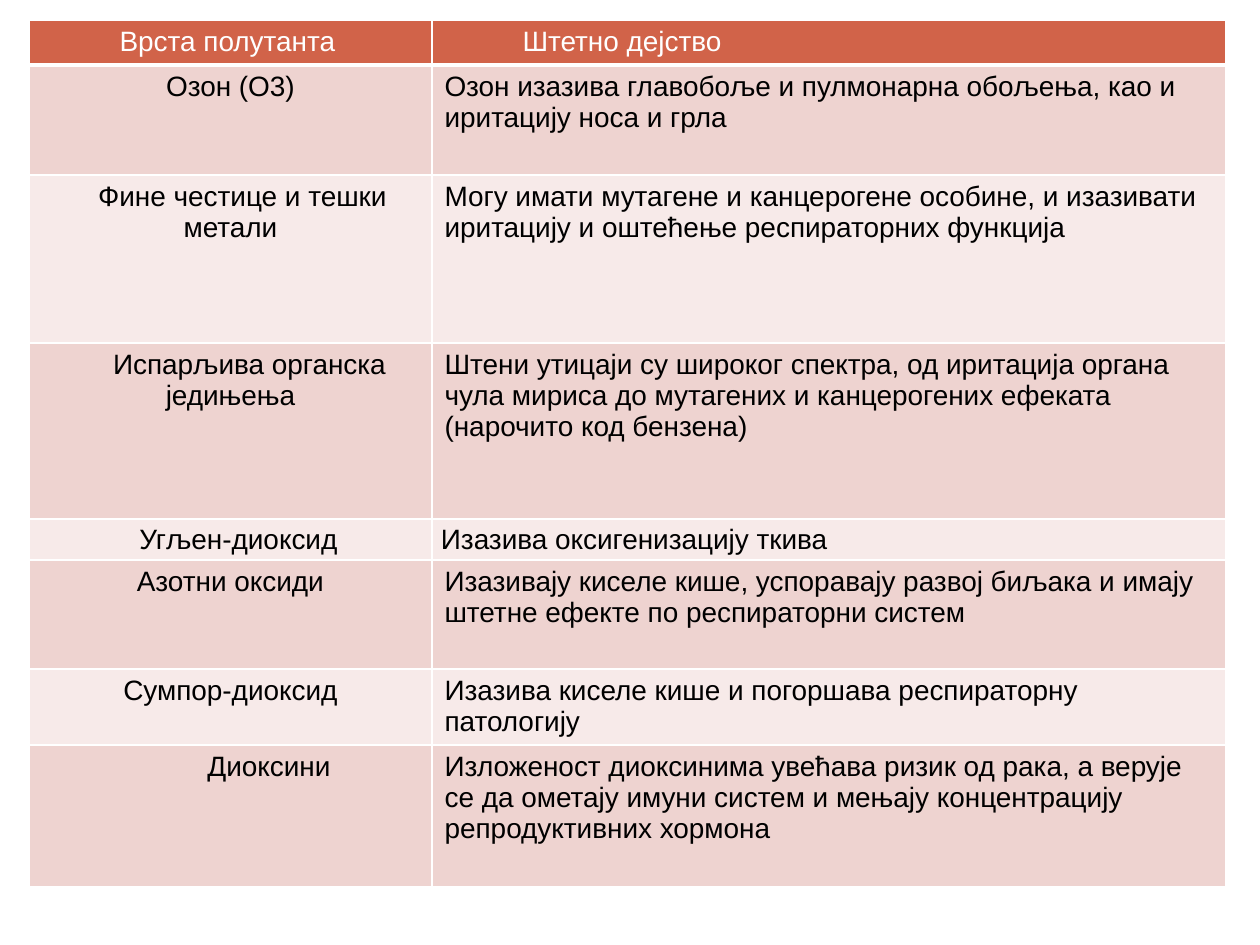
"""Build a slide with a table of air pollutants and their harmful effects."""
from lxml import etree
from pptx import Presentation
from pptx.dml.color import RGBColor
from pptx.enum.text import MSO_ANCHOR, PP_ALIGN
from pptx.oxml.ns import qn
from pptx.util import Pt

LEFT, CENTER = PP_ALIGN.LEFT, PP_ALIGN.CENTER
TOP, MIDDLE = MSO_ANCHOR.TOP, MSO_ANCHOR.MIDDLE
WHITE = RGBColor(0xFF, 0xFF, 0xFF)
BLACK = RGBColor(0x00, 0x00, 0x00)
RUST = RGBColor(0xD1, 0x63, 0x49)
ROSE = RGBColor(0xEE, 0xD3, 0xD0)
PALE = RGBColor(0xF7, 0xEA, 0xE9)
SCALE = 914400 / 126

WIDTHS = [403, 794]
HEADS = ["Врста полутанта", "Штетно дејство"]
ROWS = [
    (110, 0, "Озон (О3)",
     "Озон изазива главобоље и пулмонарна обољења, као и иритацију носа и грла"),
    (168, 24, "Фине честице и тешки метали",
     "Могу имати мутагене и канцерогене особине, и изазивати иритацију "
     "и оштећење респираторних функција"),
    (176, 38, "Испарљива органска једињења",
     "Штени утицаји су широког спектра, од иритација органа чула мириса "
     "до мутагених и канцерогених ефеката (нарочито код бензена)"),
    (41, 16, "Угљен-диоксид", "Изазива оксигенизацију ткива"),
    (109, 0, "Азотни оксиди",
     "Изазивају киселе кише, успоравају развој биљака и имају "
     "штетне ефекте по респираторни систем"),
    (76, 0, "Сумпор-диоксид",
     "Изазива киселе кише и погоршава респираторну патологију"),
    (142, 77, "Диоксини",
     "Изложеност диоксинима увећава ризик од рака, а верује се да ометају "
     "имуни систем и мењају концентрацију репродуктивних хормона"),
]
HEAD = 45
TIGHT = 4


def px(count):
    """Turn px into EMU."""
    return round(count * SCALE)


class Deck:
    """Hold the style and the current slide."""

    def __init__(self, font, size):
        """Start a deck with one blank slide."""
        self.font, self.size = font, Pt(size)
        self.prs = Presentation()
        self.prs.slide_width, self.prs.slide_height = px(1260), px(945)
        self.slide = self.prs.slides.add_slide(self.prs.slide_layouts[6])

    def table(self, left, top, widths, heights):
        """Add a plain table with the given columns and rows."""
        frame = self.slide.shapes.add_table(
            len(heights), len(widths), px(left), px(top),
            px(sum(widths)), px(sum(heights)))
        grid = frame.table
        grid.first_row = grid.horz_banding = False
        for col, width in zip(grid.columns, widths):
            col.width = px(width)
        for row, height in zip(grid.rows, heights):
            row.height = px(height)
        return grid

    def cell(self, cell, text, fill, color, align=LEFT, indent=0, tight=False):
        """Fill one cell with a single styled run."""
        cell.fill.solid()
        cell.fill.fore_color.rgb = fill
        cell.vertical_anchor = MIDDLE if tight else TOP
        if tight:
            cell.margin_left = cell.margin_right = px(9)
            cell.margin_top = cell.margin_bottom = 0
        para = cell.text_frame.paragraphs[0]
        para.alignment = align
        if indent:
            para._p.get_or_add_pPr().set("indent", str(px(indent)))
        run = para.add_run()
        run.text = text
        run.font.name, run.font.size = self.font, self.size
        run.font.bold = False
        run.font.color.rgb = color

    def border(self, cell, **sides):
        """Draw the cell borders, each side given in points."""
        props = cell._tc.get_or_add_tcPr()
        for spot, side in enumerate("LRTB"):
            line = etree.Element(qn("a:ln" + side), w=str(Pt(sides.get(side, 1))))
            solid = etree.SubElement(line, qn("a:solidFill"))
            etree.SubElement(solid, qn("a:srgbClr"), val=str(WHITE))
            props.insert(spot, line)


def main():
    """Build and save the slide."""
    deck = Deck("Arial", 16)
    grid = deck.table(29, 20, WIDTHS, [HEAD] + [row[0] for row in ROWS])
    for col, text in enumerate(HEADS):
        cell = grid.cell(0, col)
        deck.cell(cell, text, RUST, WHITE, indent=78)
        deck.border(cell, B=3)
    for num, (_, indent, name, harm) in enumerate(ROWS, 1):
        fill = ROSE if num % 2 else PALE
        tight = num == TIGHT
        first, second = grid.cell(num, 0), grid.cell(num, 1)
        deck.cell(first, name, fill, BLACK, CENTER, indent, tight)
        deck.cell(second, harm, fill, BLACK, tight=tight)
        for cell in (first, second):
            deck.border(cell, T=3 if num == 1 else 1)
    deck.prs.save("out.pptx")


if __name__ == "__main__":
    main()
